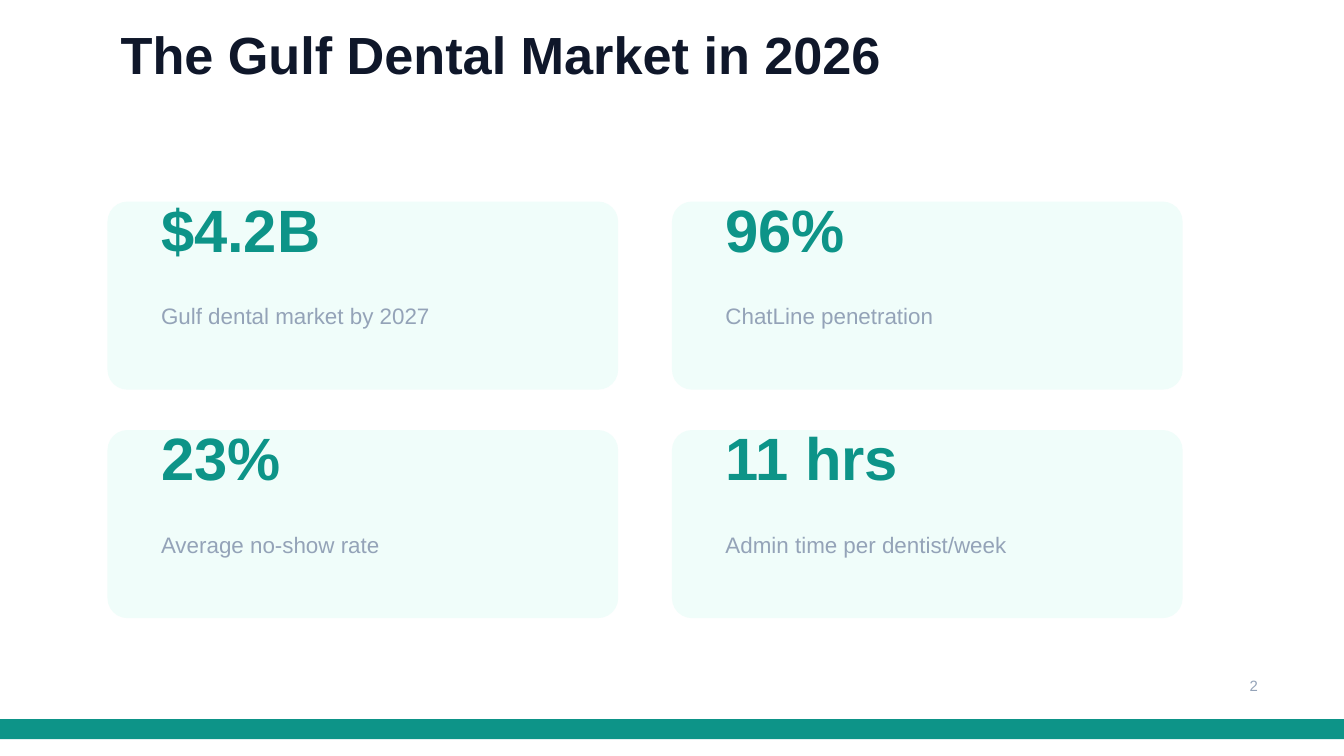
from pptx import Presentation
from pptx.dml.color import RGBColor
from pptx.enum import shapes, text
from pptx.util import Pt

TEAL, MINT, NAVY, GREY = "0D9488", "F0FDFA", "0F172A", "94A3B8"
SLIDE_W, SLIDE_H = 720, 405
STATS = [
    ("$4.2B", "Gulf dental market by 2027"),
    ("96%", "ChatLine penetration"),
    ("23%", "Average no-show rate"),
    ("11 hrs", "Admin time per dentist/week"),
]


def color(hex_string):
    return RGBColor.from_string(hex_string)


def add_text(slide, words, left, middle, width, *, size, ink, bold=False):
    """Place one line of text, centred vertically on the height `middle`."""
    box = slide.shapes.add_textbox(Pt(left), Pt(middle), Pt(width), Pt(0))
    frame = box.text_frame
    frame.word_wrap = True
    frame.auto_size = text.MSO_AUTO_SIZE.NONE
    frame.vertical_anchor = text.MSO_ANCHOR.MIDDLE
    run = frame.paragraphs[0].add_run()
    run.text = words
    run.font.name = "Arial"
    run.font.size = Pt(size)
    run.font.bold = bold
    run.font.color.rgb = color(ink)


def add_panel(slide, preset, left, top, width, height, fill):
    panel = slide.shapes.add_shape(preset, Pt(left), Pt(top), Pt(width), Pt(height))
    panel.shadow.inherit = False
    panel.fill.solid()
    panel.fill.fore_color.rgb = color(fill)
    panel.line.fill.background()
    return panel


def add_stat_card(slide, left, top, width, height, figure, label):
    card = add_panel(slide, shapes.MSO_SHAPE.ROUNDED_RECTANGLE,
                     left, top, width, height, MINT)
    card.adjustments[0] = 0.107
    padding = 21.6
    inner = width - 2 * padding
    add_text(slide, figure, left + padding, top + 14.4, inner,
             size=32, ink=TEAL, bold=True)
    add_text(slide, label, left + padding, top + 61.2, inner, size=12, ink=GREY)


def add_stat_grid(slide, left, top, width, height):
    gap_x, gap_y = 28.8, 21.6
    card_w, card_h = (width - gap_x) / 2, (height - gap_y) / 2
    for index, (figure, label) in enumerate(STATS):
        row, column = divmod(index, 2)
        add_stat_card(slide, left + column * (card_w + gap_x),
                      top + row * (card_h + gap_y), card_w, card_h, figure, label)


def add_footer(slide, left, top, width, height, page):
    add_panel(slide, shapes.MSO_SHAPE.RECTANGLE, left, top, width, height, TEAL)
    add_text(slide, page, left + width - 57.6, top - 18, 36, size=8, ink=GREY)


def main():
    deck = Presentation()
    deck.slide_width, deck.slide_height = Pt(SLIDE_W), Pt(SLIDE_H)
    slide = deck.slides.add_slide(deck.slide_layouts[6])
    slide.background.fill.solid()
    slide.background.fill.fore_color.rgb = color("FFFFFF")

    # Title
    add_text(slide, "The Gulf Dental Market in 2026", 57.6, 28.8, 576,
             size=28, ink=NAVY, bold=True)
    # Key figures, two by two
    add_stat_grid(slide, 57.6, 108, 576, 223.2)
    # Bottom band and page number
    add_footer(slide, 0, 385.2, SLIDE_W, 10.8, "2")

    deck.save("out.pptx")


if __name__ == "__main__":
    main()
